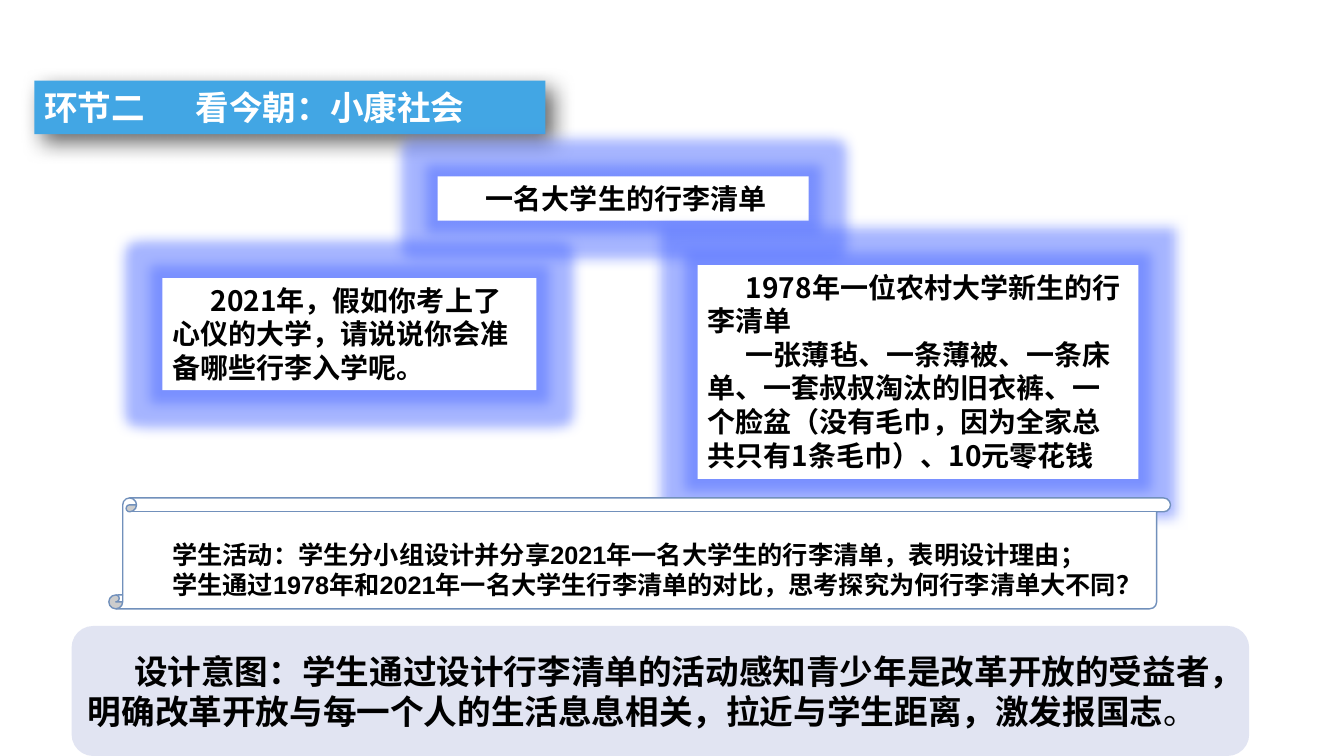
from dataclasses import dataclass

from lxml.etree import SubElement
from pptx import Presentation
from pptx.dml.color import RGBColor
from pptx.enum.shapes import MSO_SHAPE
from pptx.enum.text import MSO_ANCHOR, MSO_AUTO_SIZE, PP_ALIGN
from pptx.oxml.ns import qn
from pptx.util import Emu, Pt

PX = 9144
SANS = "Noto Sans CJK SC"
COLORS = {
    "banner": "42A6E4",
    "paper": "FFFFFF",
    "ink": "000000",
    "glow": "4D6BFF",
    "intent": "E1E4F2",
    "scroll": "7190BB",
}


@dataclass(frozen=True)
class Box:
    left: int
    top: int
    width: int
    height: int


@dataclass(frozen=True)
class Card:
    box: Box
    paragraphs: tuple[str, ...]


BANNER = Card(Box(34, 80, 507, 53), ("环节二\t看今朝：小康社会",))
CARDS = (
    Card(Box(434, 175, 368, 44), ("一名大学生的行李清单",)),
    Card(Box(161, 276, 371, 111), ("2021年，假如你考上了心仪的大学，请说说你会准备哪些行李入学呢。",)),
    Card(Box(692, 263, 437, 212), (
        "1978年一位农村大学新生的行李清单",
        "一张薄毡、一条薄被、一条床单、一套叔叔淘汰的旧衣裤、一个脸盆（没有毛巾，因为全家总共只有1条毛巾）、10元零花钱",
    )),
)
INTENT = Card(Box(71, 621, 1168, 129), (
    "设计意图：学生通过设计行李清单的活动感知青少年是改革开放的受益者，明确改革开放与每一个人的生活息息相关，拉近与学生距离，激发报国志",
))
SCROLL = Box(108, 494, 1053, 110)
ACTIVITY = Card(Box(161, 530, 997, 71), (
    "学生活动：学生分小组设计并分享2021年一名大学生的行李清单，表明设计理由；",
    "学生通过1978年和2021年一名大学生行李清单的对比，思考探究为何行李清单大不同？",
))


def px(length: int) -> Emu:
    return Emu(length * PX)


def rgb(name: str) -> RGBColor:
    return RGBColor.from_string(COLORS[name])


def edges(box: Box) -> tuple[Emu, ...]:
    return px(box.left), px(box.top), px(box.width), px(box.height)


def style_run(run, size: int, color: str = "ink", latin: str = SANS, bold: bool = True) -> None:
    for attribute, value in {"name": latin, "size": Pt(size), "bold": bold}.items():
        setattr(run.font, attribute, value)
    run.font.color.rgb = rgb(color)
    east_asian = SubElement(run.font._element, qn("a:ea"))
    east_asian.set("typeface", SANS)


def write(frame, paragraphs: tuple[str, ...], size: int, indent: int = 0,
          color: str = "ink", latin: str = SANS, **frame_format) -> None:
    for attribute, value in {"word_wrap": True, **frame_format}.items():
        setattr(frame, attribute, value)
    for number, words in enumerate(paragraphs):
        paragraph = frame.add_paragraph() if number else frame.paragraphs[0]
        paragraph.alignment = PP_ALIGN.LEFT
        properties = paragraph._p.get_or_add_pPr()
        properties.set("marL", "0")
        properties.set("indent", str(px(indent)))
        run = paragraph.add_run()
        run.text = words
        style_run(run, size, color, latin)


def add_panel(slide, preset: MSO_SHAPE, box: Box, fill: str):
    panel = slide.shapes.add_shape(preset, *edges(box))
    panel.shadow.inherit = False
    panel.fill.solid()
    panel.fill.fore_color.rgb = rgb(fill)
    panel.line.fill.background()
    return panel


def add_effect(properties, tag: str, color: str, opacity: int, **settings: int) -> None:
    effects = properties.find(qn("a:effectLst"))
    if effects is None:
        effects = SubElement(properties, qn("a:effectLst"))
    effect = SubElement(effects, qn(tag), {key: str(value) for key, value in settings.items()})
    tint = SubElement(effect, qn("a:srgbClr"), val=COLORS[color])
    SubElement(tint, qn("a:alpha"), val=str(opacity * 1000))


def add_banner(slide) -> None:
    banner = slide.shapes.title
    banner.left, banner.top, banner.width, banner.height = edges(BANNER.box)
    properties = banner._element.spPr
    geometry = SubElement(properties, qn("a:prstGeom"), prst="roundRect")
    SubElement(geometry, qn("a:avLst"))
    banner.fill.solid()
    banner.fill.fore_color.rgb = rgb("banner")
    add_effect(properties, "a:outerShdw", "ink", 60, blurRad=Pt(16), dist=Pt(8),
               dir=45 * 60000, algn="tl", rotWithShape=0)
    stops = SubElement(banner.text_frame.paragraphs[0]._p.get_or_add_pPr(), qn("a:tabLst"))
    SubElement(stops, qn("a:tab"), pos=str(px(138)), algn="l")
    write(banner.text_frame, BANNER.paragraphs, 24, color="paper",
          vertical_anchor=MSO_ANCHOR.MIDDLE, auto_size=MSO_AUTO_SIZE.NONE)


def add_card(slide, card: Card) -> None:
    panel = add_panel(slide, MSO_SHAPE.RECTANGLE, card.box, "paper")
    add_effect(panel._element.spPr, "a:glow", "glow", 50, rad=Pt(18))
    write(panel.text_frame, card.paragraphs, 20, indent=38,
          vertical_anchor=MSO_ANCHOR.TOP, auto_size=MSO_AUTO_SIZE.SHAPE_TO_FIT_TEXT)


def add_intent(slide) -> None:
    panel = add_panel(slide, MSO_SHAPE.ROUNDED_RECTANGLE, INTENT.box, "intent")
    write(panel.text_frame, INTENT.paragraphs, 24, indent=46, vertical_anchor=MSO_ANCHOR.MIDDLE)
    full_stop = panel.text_frame.paragraphs[0].add_run()
    full_stop.text = "。"
    style_run(full_stop, 24, bold=False)


def add_activity(slide) -> None:
    scroll = add_panel(slide, MSO_SHAPE.VERTICAL_SCROLL, SCROLL, "paper")
    scroll.line.color.rgb = rgb("scroll")
    scroll.line.width = Pt(1)
    activity = slide.shapes.add_textbox(*edges(ACTIVITY.box))
    write(activity.text_frame, ACTIVITY.paragraphs, 18, latin="Arial",
          word_wrap=False, auto_size=MSO_AUTO_SIZE.SHAPE_TO_FIT_TEXT)


def main() -> None:
    deck = Presentation()
    deck.slide_width, deck.slide_height = px(1333), px(750)
    slide = deck.slides.add_slide(deck.slide_layouts[5])
    add_banner(slide)
    for card in CARDS:
        add_card(slide, card)
    add_intent(slide)
    add_activity(slide)
    deck.save("out.pptx")


if __name__ == "__main__":
    main()
